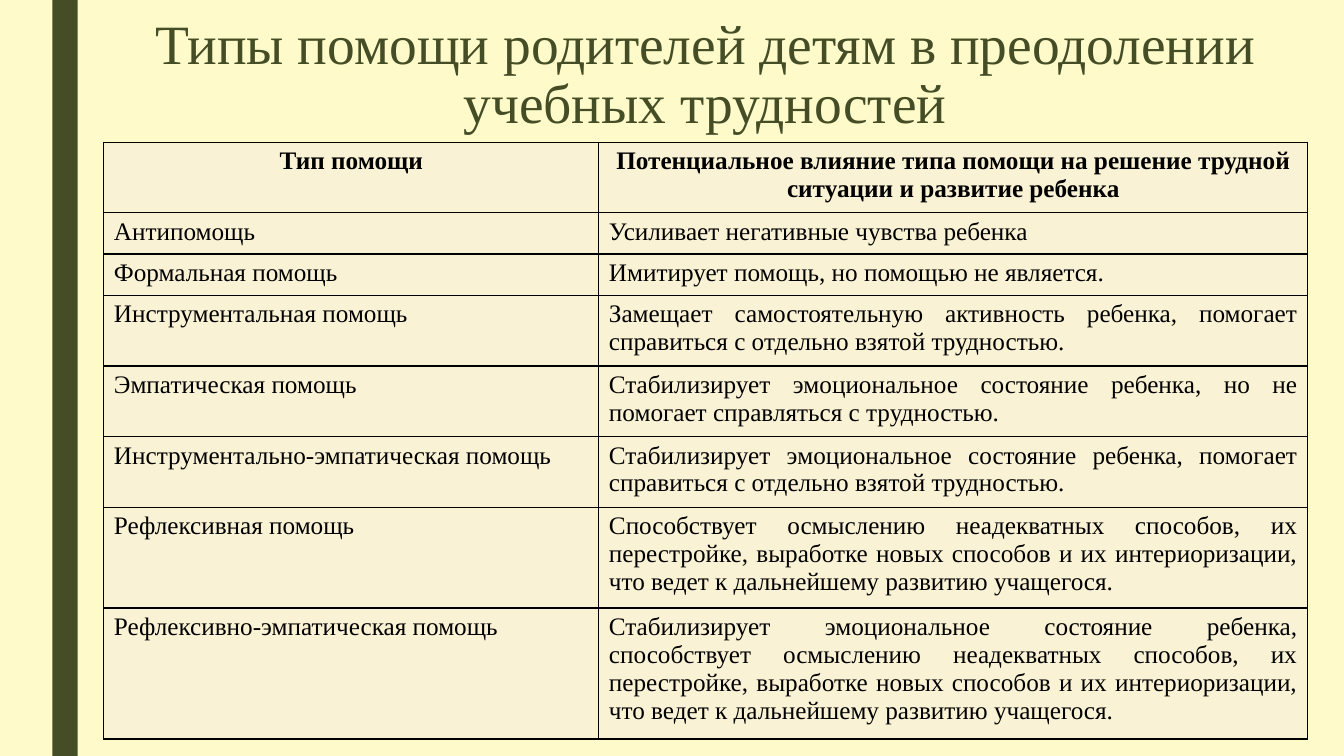
import pptx
import pptx.util
import pptx.dml.color
import pptx.enum.shapes
import pptx.enum.text
import pptx.oxml
import pptx.oxml.ns

Inches, Pt = pptx.util.Inches, pptx.util.Pt
ALIGN = pptx.enum.text.PP_ALIGN

# Content
FONT = "Times New Roman"
GREEN, BLACK, CREAM, YELLOW = "444D26", "000000", "FAF2D4", "FEFAC9"
TITLE = "Типы помощи родителей детям в преодолении учебных трудностей"
# Type of help, its influence
ROWS = [
    ("Тип помощи",
     "Потенциальное влияние типа помощи на решение трудной ситуации и развитие ребенка"),
    ("Антипомощь", "Усиливает негативные чувства ребенка"),
    ("Формальная помощь", "Имитирует помощь, но помощью не является."),
    ("Инструментальная помощь",
     "Замещает самостоятельную активность ребенка, помогает справиться "
     "с отдельно взятой трудностью."),
    ("Эмпатическая помощь",
     "Стабилизирует эмоциональное состояние ребенка, но не помогает "
     "справляться с трудностью."),
    ("Инструментально-эмпатическая помощь",
     "Стабилизирует эмоциональное состояние ребенка, помогает справиться "
     "с отдельно взятой трудностью."),
    ("Рефлексивная помощь",
     "Способствует осмыслению неадекватных способов, их перестройке, выработке новых "
     "способов и их интериоризации, что ведет к дальнейшему развитию учащегося."),
    ("Рефлексивно-эмпатическая помощь",
     "Стабилизирует эмоциональное состояние ребенка, способствует осмыслению "
     "неадекватных способов, их перестройке, выработке новых способов и их "
     "интериоризации, что ведет к дальнейшему развитию учащегося."),
]
COLS = (4.91, 7.03)
ROW_HEIGHT = 0.41  # minimum; rows grow with their text


def paint(color_owner, value):
    color_owner.rgb = pptx.dml.color.RGBColor.from_string(value)


def fill(target, value):
    target.solid()
    paint(target.fore_color, value)


def write(tf, text, size, color, align, bold=False):
    p = tf.paragraphs[0]
    p.alignment = align
    r = p.add_run()
    r.text = text
    r.font.name, r.font.size, r.font.bold = FONT, Pt(size), bold
    paint(r.font.color, color)
    return p


def border(cell, color, width):
    tcPr = cell._tc.get_or_add_tcPr()
    for i, side in enumerate(("lnL", "lnR", "lnT", "lnB")):
        tcPr.insert(i, pptx.oxml.parse_xml(
            f'<a:{side} {pptx.oxml.ns.nsdecls("a")} w="{Pt(width)}">'
            f'<a:solidFill><a:srgbClr val="{color}"/></a:solidFill></a:{side}>'))


prs = pptx.Presentation()
prs.slide_width, prs.slide_height = Inches(13.33), Inches(7.5)
s = prs.slides.add_slide(prs.slide_layouts[6])
fill(s.background.fill, YELLOW)

# Side stripe
stripe = s.shapes.add_shape(pptx.enum.shapes.MSO_SHAPE.RECTANGLE,
                            Inches(0.52), 0, Inches(0.25), Inches(7.5))
stripe.shadow.inherit = False
fill(stripe.fill, GREEN)
stripe.line.fill.background()

# Title
tf = s.shapes.add_textbox(Inches(0.91), Inches(0.12), Inches(12.17), Inches(0.83)).text_frame
tf.word_wrap = True
tf.vertical_anchor = pptx.enum.text.MSO_ANCHOR.TOP
write(tf, TITLE, 39.6, GREEN, ALIGN.CENTER).line_spacing = 0.89

# Table
table = s.shapes.add_table(len(ROWS), len(COLS), Inches(1.03), Inches(1.41),
                           Inches(sum(COLS)), Inches(ROW_HEIGHT * len(ROWS))).table
for column, width in zip(table.columns, COLS):
    column.width = Inches(width)
for i, texts in enumerate(ROWS):
    for j, align in enumerate((ALIGN.LEFT, ALIGN.JUSTIFY)):
        cell = table.cell(i, j)
        fill(cell.fill, CREAM)
        border(cell, BLACK, 1)
        write(cell.text_frame, texts[j], 18, BLACK,
              ALIGN.CENTER if i == 0 else align, bold=i == 0)

prs.save("out.pptx")
